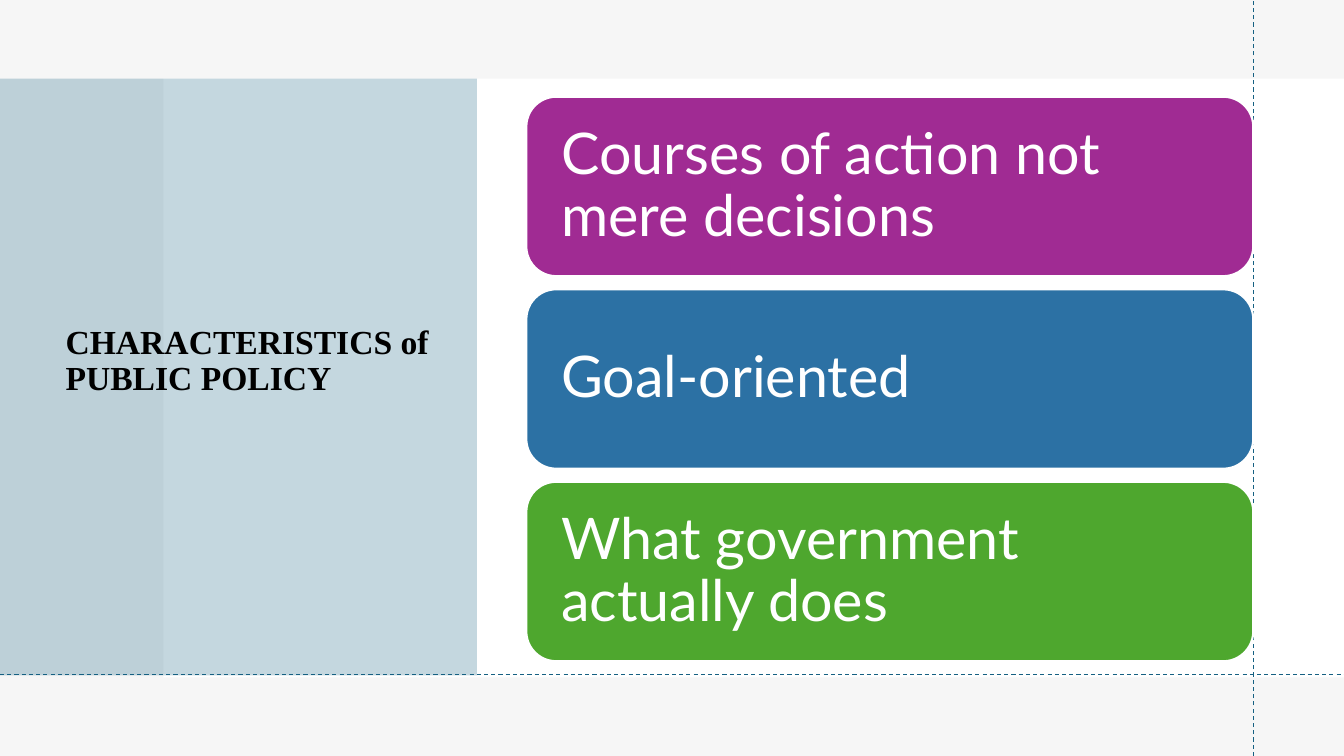
import pptx
import pptx.util
import pptx.dml.color
import pptx.enum.dml
import pptx.enum.shapes
import pptx.enum.text
import pptx.oxml.ns
import pptx.oxml.xmlchemy

WIDTH, HEIGHT = 13.33, 7.5
CARD_LEFT, CARD_TOP = 5.22, 0.96
CARD_WIDTH, CARD_HEIGHT, CARD_PITCH = 7.21, 1.78, 1.91
CARD_INSET = 0.26
GUIDE_X, GUIDE_Y = CARD_LEFT + CARD_WIDTH, 6.69
CARDS = [
    ("Courses of action not mere decisions", "A02B93"),
    ("Goal-oriented", "2C71A4"),
    ("What government actually does", "4EA72E"),
]


def inches(*lengths):
    return [pptx.util.Inches(length) for length in lengths]


def paint(color_format, color):
    color_format.rgb = pptx.dml.color.RGBColor.from_string(color)


def add_box(slide, box, color, alpha=100, rounded=False, outline=None):
    kinds = pptx.enum.shapes.MSO_SHAPE
    kind = kinds.ROUNDED_RECTANGLE if rounded else kinds.RECTANGLE
    shape = slide.shapes.add_shape(kind, *inches(*box))
    shape.shadow.inherit = False
    shape.fill.solid()
    paint(shape.fill.fore_color, color)
    if alpha < 100:
        color_element = shape._element.spPr.find(".//" + pptx.oxml.ns.qn("a:srgbClr"))
        alpha_element = pptx.oxml.xmlchemy.OxmlElement("a:alpha")
        alpha_element.set("val", str(alpha * 1000))
        color_element.append(alpha_element)
    if outline:
        paint(shape.line.color, outline)
        shape.line.width = pptx.util.Pt(1.5)
    else:
        shape.line.fill.background()
    return shape


def write_text(shape, text, *, font, size, color, bold=False, inset=0.1):
    frame = shape.text_frame
    frame.word_wrap = True
    frame.auto_size = pptx.enum.text.MSO_AUTO_SIZE.NONE
    frame.vertical_anchor = pptx.enum.text.MSO_ANCHOR.MIDDLE
    frame.margin_left = frame.margin_right = pptx.util.Inches(inset)
    frame.margin_top = frame.margin_bottom = pptx.util.Inches(inset)
    paragraph = frame.paragraphs[0]
    paragraph.alignment = pptx.enum.text.PP_ALIGN.LEFT
    paragraph.line_spacing = 0.9
    run = paragraph.add_run()
    run.text = text
    run.font.name = font
    run.font.size = pptx.util.Pt(size)
    run.font.bold = bold
    paint(run.font.color, color)


def add_guide(slide, *ends):
    connector = slide.shapes.add_connector(
        pptx.enum.shapes.MSO_CONNECTOR.STRAIGHT, *inches(*ends))
    paint(connector.line.color, "156082")
    connector.line.width = pptx.util.Pt(0.75)
    connector.line.dash_style = pptx.enum.dml.MSO_LINE.DASH
    connector._element.spPr.append(pptx.oxml.xmlchemy.OxmlElement("a:effectLst"))


def place_title(slide, text, box):
    title = slide.shapes.title
    title.left, title.top, title.width, title.height = inches(*box)
    write_text(title, text, font="Times New Roman", size=24, color="000000", bold=True)
    slide.shapes._spTree.append(title._element)


def add_card(slide, row, text, color):
    box = (CARD_LEFT, CARD_TOP + row * CARD_PITCH, CARD_WIDTH, CARD_HEIGHT)
    card = add_box(slide, box, color, rounded=True, outline="FFFFFF")
    write_text(card, text, font="Lato", size=41, color="FFFFFF", inset=CARD_INSET)


def main():
    presentation = pptx.Presentation()
    presentation.slide_width, presentation.slide_height = inches(WIDTH, HEIGHT)
    slide = presentation.slides.add_slide(presentation.slide_layouts[5])
    slide.background.fill.solid()
    paint(slide.background.fill.fore_color, "F7F7F7")

    add_box(slide, (0, 0, WIDTH, HEIGHT), "FFFFFF")
    add_box(slide, (0, 0, WIDTH, HEIGHT), "E8E8E8", alpha=35)
    add_box(slide, (1.62, 0.78, WIDTH - 1.62, 5.94), "FFFFFF")
    add_box(slide, (0, 0.78, 4.73, 5.92), "156082", alpha=25)
    place_title(slide, "CHARACTERISTICS of PUBLIC POLICY", (0.55, 0.74, 3.95, 5.69))

    add_guide(slide, GUIDE_X, HEIGHT, GUIDE_X, 0)
    add_guide(slide, 0, GUIDE_Y, WIDTH, GUIDE_Y)
    for row, (text, color) in enumerate(CARDS):
        add_card(slide, row, text, color)

    presentation.save("out.pptx")


if __name__ == "__main__":
    main()
